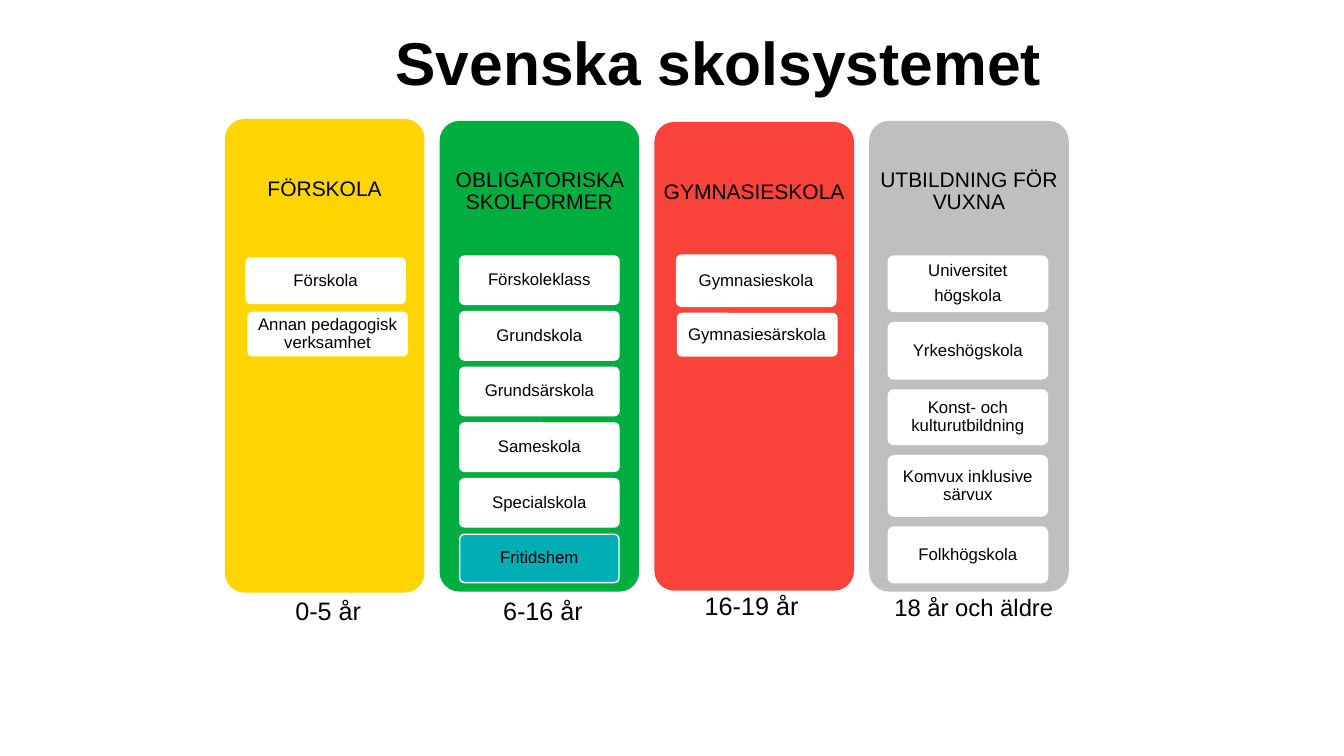
from dataclasses import dataclass

from pptx import Presentation
from pptx.dml.color import RGBColor as RGB
from pptx.enum.shapes import MSO_SHAPE as Shape
from pptx.enum.text import MSO_ANCHOR as Anchor, PP_ALIGN as Align
from pptx.util import Inches, Pt


@dataclass(frozen=True)
class Theme:
    font: str = "Arial"
    ink: str = "000000"
    white: str = "FFFFFF"
    teal: str = "00AEB3"
    yellow: str = "FFD500"
    green: str = "00AE40"
    red: str = "F9423A"
    grey: str = "BFBFBF"
    title: float = 43.2
    head: float = 15
    card: float = 12
    age: float = 18
    adult: float = 17


THEME = Theme()
LEFT, STEP, WIDE, CARD = 2.23, 2.13, 1.98, 1.58

# Each stage: name, fill, (top, height), (card inset, sideways shift per card),
# (first card top, last card bottom), [(card text, height)], (age, left, top, width, size)
STAGES = [
    ("FÖRSKOLA", THEME.yellow, (1.18, 4.7), (0.21, 0.02), (2.56, 3.53),
     [("Förskola", 0.45), ("Annan pedagogisk verksamhet", 0.43)],
     ("0-5 år", 2.41, 5.86, 1.69, THEME.age)),
    ("OBLIGATORISKA SKOLFORMER", THEME.green, (1.2, 4.67), (0.2, 0), (2.54, 5.78),
     [(name, 0.48) for name in ("Förskoleklass", "Grundskola", "Grundsärskola",
                                "Sameskola", "Specialskola", "Fritidshem")],
     ("6-16 år", 4.54, 5.86, 1.69, THEME.age)),
    ("GYMNASIESKOLA", THEME.red, (1.21, 4.65), (0.22, 0.01), (2.53, 3.53),
     [("Gymnasieskola", 0.51), ("Gymnasiesärskola", 0.42)],
     ("16-19 år", 6.61, 5.81, 1.69, THEME.age)),
    ("UTBILDNING FÖR VUXNA", THEME.grey, (1.2, 4.67), (0.19, 0), (2.54, 5.78),
     [("Universitet\nhögskola", 0.55), ("Yrkeshögskola", 0.56),
      ("Konst- och kulturutbildning", 0.54), ("Komvux inklusive särvux", 0.6),
      ("Folkhögskola", 0.55)],
     ("18 år och äldre", 8.73, 5.83, 1.86, THEME.adult)),
]


def write(frame, text, size, bold=False, anchor=Anchor.MIDDLE, pad=(0.1, 0.05),
          lead=0.9, gap=5):
    """Fill a frame, one paragraph a line, with gap points between them."""
    frame.word_wrap = True
    frame.vertical_anchor = anchor
    frame.margin_left = frame.margin_right = Inches(pad[0])
    frame.margin_top = frame.margin_bottom = Inches(pad[1])
    for i, line in enumerate(text.split("\n")):
        para = frame.paragraphs[0] if i == 0 else frame.add_paragraph()
        para.alignment = Align.CENTER
        para.line_spacing = lead
        para.space_before = Pt(gap if i else 0)
        run = para.add_run()
        run.text = line
        font = run.font
        font.name, font.size, font.bold = THEME.font, Pt(size), bold
        font.color.rgb = RGB.from_string(THEME.ink)


class Board:
    def __init__(self, slide, theme):
        self.slide, self.theme = slide, theme

    def text(self, text, x, y, w, h, size, **style):
        box = self.slide.shapes.add_textbox(Inches(x), Inches(y), Inches(w), Inches(h))
        write(box.text_frame, text, size, **style)

    def panel(self, x, y, w, h, fill, line=None):
        box = self.slide.shapes.add_shape(
            Shape.ROUNDED_RECTANGLE, Inches(x), Inches(y), Inches(w), Inches(h))
        box.adjustments[0] = 0.1
        box.shadow.inherit = False
        box.fill.solid()
        box.fill.fore_color.rgb = RGB.from_string(fill)
        if line:
            box.line.color.rgb = RGB.from_string(line)
            box.line.width = Pt(1)
        else:
            box.line.fill.background()
        return box

    def card(self, text, x, y, h):
        fill = self.theme.teal if text == "Fritidshem" else self.theme.white
        box = self.panel(x, y, CARD, h, fill, self.theme.white)
        write(box.text_frame, text, self.theme.card, pad=(0.03, 0.03))

    def stack(self, cards, x, shift, top, end):
        """Spread the cards from top to end with equal gaps."""
        gap = (end - top - sum(h for _, h in cards)) / (len(cards) - 1)
        for i, (text, h) in enumerate(cards):
            self.card(text, x + i * shift, top, h)
            top += h + gap

    def stage(self, x, name, fill, span, inset, reach, cards, age):
        top, high = span
        self.panel(x, top, WIDE, high, fill)
        self.text(name, x, top, WIDE, 0.3 * high, self.theme.head, pad=(0.06, 0.06))
        self.stack(cards, x + inset[0], inset[1], *reach)
        label, left, base, wide, size = age
        self.text(label, left, base, wide, 0.4, size, anchor=Anchor.TOP, lead=1.0)


def main():
    deck = Presentation()
    deck.slide_width, deck.slide_height = Inches(13.33), Inches(7.5)
    board = Board(deck.slides.add_slide(deck.slide_layouts[6]), THEME)
    board.text("Svenska skolsystemet", 2.23, 0.27, 9.79, 0.77, THEME.title, bold=True)
    for i, stage in enumerate(STAGES):
        board.stage(LEFT + i * STEP, *stage)
    deck.save("out.pptx")


if __name__ == "__main__":
    main()
